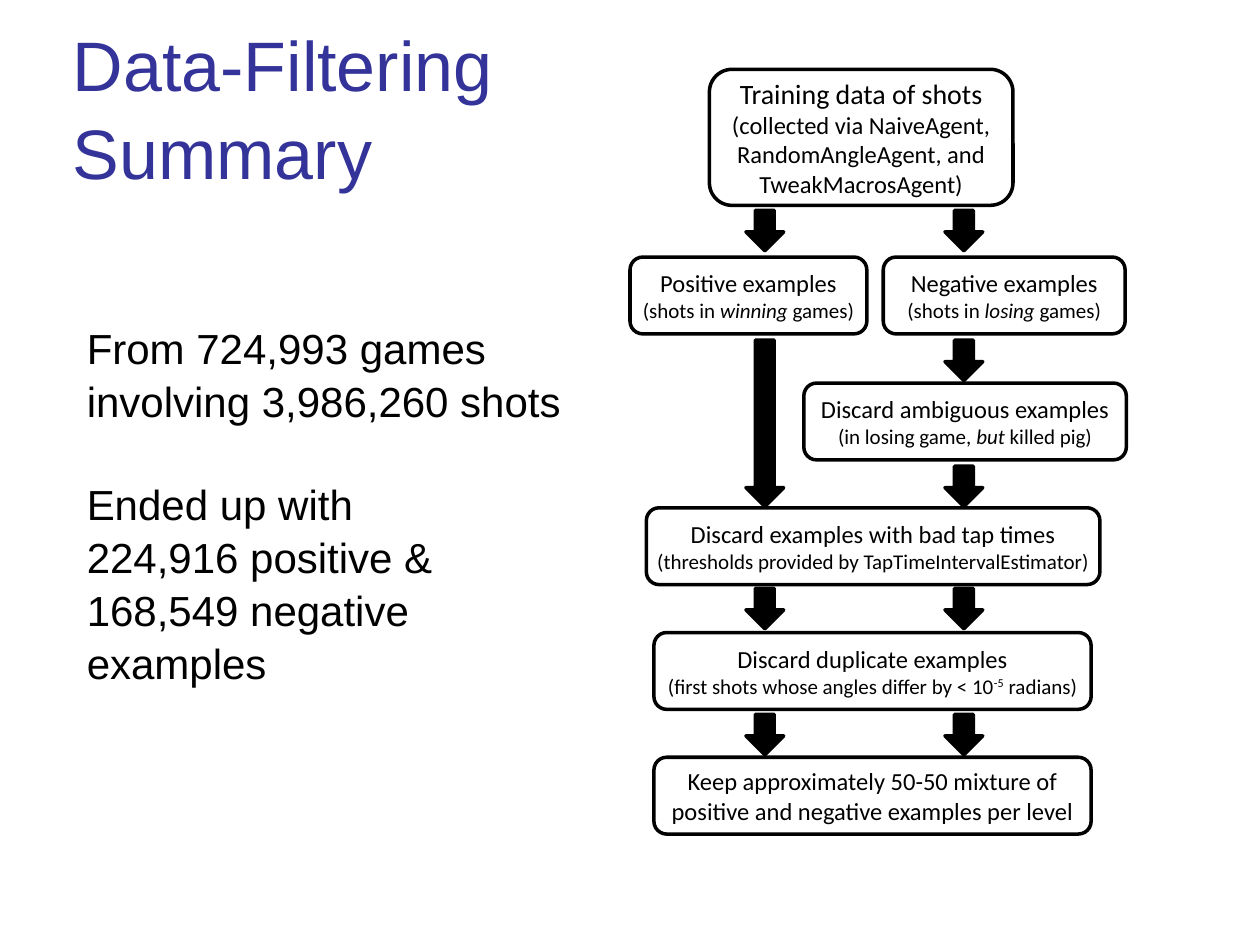
from dataclasses import dataclass

from pptx import Presentation
from pptx.dml.color import RGBColor
from pptx.enum.shapes import MSO_SHAPE as Shape
from pptx.enum.text import MSO_ANCHOR as Anchor, PP_ALIGN as Align
from pptx.util import Inches, Pt


@dataclass(frozen=True)
class Theme:
    title_color: RGBColor = RGBColor(0x33, 0x33, 0x99)
    ink: RGBColor = RGBColor(0, 0, 0)
    paper: RGBColor = RGBColor(0xFF, 0xFF, 0xFF)
    heading_font: str = "Arial"
    diagram_font: str = "Calibri"
    title_size: int = 40
    body_size: int = 24
    source_size: int = 16
    step_size: int = 14
    detail_size: int = 12
    outline: int = 2
    line_spacing: float = 1.05


class SlideBuilder:
    def __init__(self, slide, theme):
        self.slide = slide
        self.theme = theme

    def set_font(self, font, name, size, color):
        font.name = name
        font.size = Pt(size)
        font.color.rgb = color

    def text(self, left, top, width, height, paragraphs, size, color, anchor=Anchor.TOP, gap=0):
        """Add left-aligned paragraphs, with a gap in points between them."""
        box = self.slide.shapes.add_textbox(*map(Inches, (left, top, width, height)))
        frame = box.text_frame
        frame.word_wrap = True
        frame.vertical_anchor = anchor
        for index, text in enumerate(paragraphs):
            paragraph = frame.paragraphs[0] if index == 0 else frame.add_paragraph()
            paragraph.text = text
            paragraph.line_spacing = self.theme.line_spacing
            paragraph.space_before = Pt(gap if index else 0)
            self.set_font(paragraph.font, self.theme.heading_font, size, color)

    def shape(self, kind, left, top, width, height, fill):
        shape = self.slide.shapes.add_shape(kind, *map(Inches, (left, top, width, height)))
        shape.shadow.inherit = False
        shape.fill.solid()
        shape.fill.fore_color.rgb = fill
        shape.line.color.rgb = self.theme.ink
        shape.line.width = Pt(self.theme.outline)
        return shape

    def arrow(self, left, top, height=0.32):
        self.shape(Shape.DOWN_ARROW, left, top, 0.3, height, self.theme.ink)

    def step(self, left, top, width, height, lines):
        """Add a box; each line is a size followed by text or (text, style) parts."""
        box = self.shape(Shape.ROUNDED_RECTANGLE, left, top, width, height, self.theme.paper)
        frame = box.text_frame
        frame.word_wrap = True
        frame.vertical_anchor = Anchor.MIDDLE
        frame.margin_left = frame.margin_right = 0
        frame.margin_top = frame.margin_bottom = 0
        for index, (size, *parts) in enumerate(lines):
            paragraph = frame.paragraphs[0] if index == 0 else frame.add_paragraph()
            paragraph.alignment = Align.CENTER
            self.set_font(paragraph.font, self.theme.diagram_font, size, self.theme.ink)
            for part in parts:
                text, style = (part, None) if isinstance(part, str) else part
                run = paragraph.add_run()
                run.text = text
                if style == "italic":
                    run.font.italic = True
                elif style == "superscript":
                    run._r.get_or_add_rPr().set("baseline", "30000")


def main():
    presentation = Presentation()
    presentation.slide_width = Inches(10)
    presentation.slide_height = Inches(7.5)
    theme = Theme()
    builder = SlideBuilder(presentation.slides.add_slide(presentation.slide_layouts[6]), theme)

    builder.text(0.48, 0.21, 9, 1.25, ["Data-Filtering \vSummary"],
                 theme.title_size, theme.title_color, Anchor.MIDDLE)
    builder.text(0.59, 2.49, 4.02, 2.93, [
        "From 724,993 games \vinvolving 3,986,260 shots",
        "Ended up with \v224,916 positive &\v168,549 negative \vexamples",
    ], theme.body_size, theme.ink, gap=29)

    positive_x, negative_x = 5.92, 7.5
    for top in (1.67, 4.67, 5.67):
        for left in (positive_x, negative_x):
            builder.arrow(left, top)
    builder.arrow(positive_x, 2.7, height=1.32)
    for top in (2.7, 3.7):
        builder.arrow(negative_x, top)

    main_size, detail = theme.step_size, theme.detail_size
    builder.step(5.63, 0.55, 2.41, 1.08, [
        (theme.source_size, "Training data of shots"),
        (main_size, "(collected via NaiveAgent, RandomAngleAgent, and TweakMacrosAgent)"),
    ])
    steps = [
        (5, 2.04, 1.88, [
            (main_size, "Positive examples"),
            (detail, "(shots in ", ("winning", "italic"), " games)")]),
        (7.01, 2.04, 1.92, [
            (main_size, "Negative examples"),
            (detail, "(shots in ", ("losing", "italic"), " games)")]),
        (6.38, 3.04, 2.56, [
            (main_size, "Discard ambiguous examples"),
            (detail, "(in losing game, ", ("but", "italic"), " killed pig)")]),
        (5.13, 4.03, 3.6, [
            (main_size, "Discard examples with bad tap times"),
            (detail, "(thresholds provided by TapTimeIntervalEstimator)")]),
        (5.19, 5.02, 3.47, [
            (main_size, "Discard duplicate examples"),
            (detail, "(first shots whose angles differ by < 10", ("-5", "superscript"), " radians)")]),
        (5.19, 6.01, 3.47, [
            (main_size, "Keep approximately 50-50 mixture of "
                        "positive and negative examples per level")]),
    ]
    for left, top, width, lines in steps:
        builder.step(left, top, width, 0.61, lines)

    presentation.save("out.pptx")


if __name__ == "__main__":
    main()
